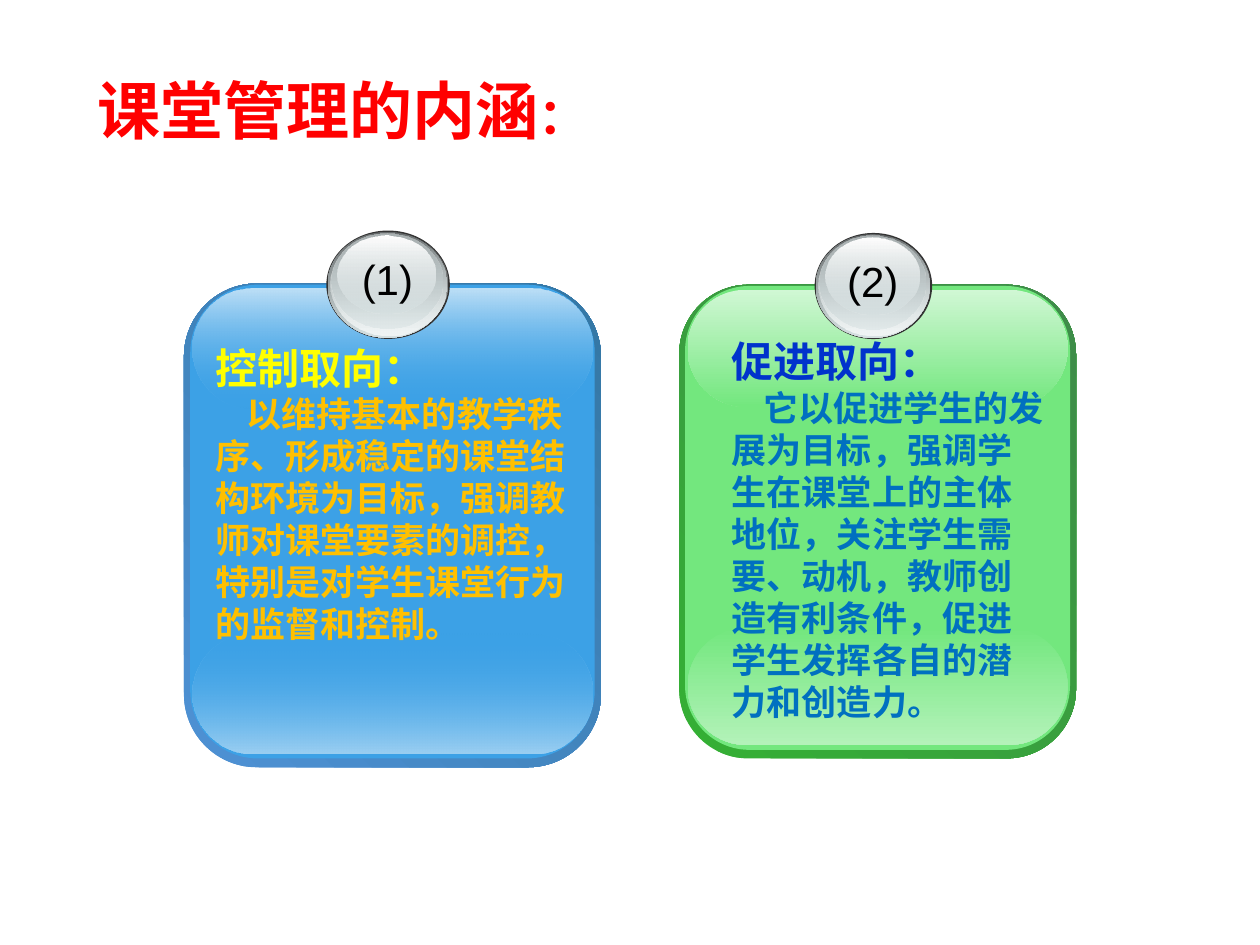
from dataclasses import dataclass
from typing import NamedTuple

from lxml import etree
from pptx import Presentation
from pptx.dml.color import RGBColor
from pptx.enum.shapes import MSO_SHAPE
from pptx.enum.text import MSO_ANCHOR, MSO_AUTO_SIZE, PP_ALIGN
from pptx.oxml.ns import qn
from pptx.util import Inches, Pt

ROUNDED = MSO_SHAPE.ROUNDED_RECTANGLE
ELLIPSE = MSO_SHAPE.OVAL
LEFT, CENTER = PP_ALIGN.LEFT, PP_ALIGN.CENTER
TOP = MSO_ANCHOR.TOP
NO_AUTOFIT = MSO_AUTO_SIZE.NONE
CJK_FONT = "Noto Sans CJK SC"
CARD_WIDTH, CARD_HEIGHT = 3.31, 3.84


class Box(NamedTuple):
    left: float
    top: float
    width: float
    height: float


class Stop(NamedTuple):
    color: str
    alpha: int = 100


@dataclass
class Layer:
    box: Box
    stops: list[Stop]
    angle: int = 90
    corner: float | None = None


@dataclass
class Card:
    box: Box
    rim: list[Stop]
    face: str
    top_gloss: str
    bottom_gloss: str
    fade: int
    number: str
    text_box: Box
    heading: str
    heading_color: str
    body: str
    body_color: str


BALL_LAYERS = [
    Layer(Box(1.13, -0.42, 0.98, 0.86), [Stop("333333")]),
    Layer(Box(1.14, -0.41, 0.95, 0.84), [Stop("636869"), Stop("D6E1E2")]),
    Layer(Box(1.16, -0.41, 0.93, 0.82), [Stop("D6E1E2", 0), Stop("F1F5F5")]),
    Layer(Box(1.17, -0.4, 0.88, 0.76), [Stop("AAB2B3"), Stop("D6E1E2", 48)]),
    Layer(Box(1.22, -0.38, 0.78, 0.62), [Stop("FFFFFF"), Stop("D6E1E2", 38)]),
]
NUMBER_BOX = Box(1.27, -0.29, 0.69, 0.5)

CARDS = [
    Card(Box(1.46, 2.25, CARD_WIDTH, CARD_HEIGHT), [Stop("4E91D4"), Stop("3477A4")],
         "3CA1E6", "BEE0F7", "9BCFF2", 0, "(1)", Box(1.61, 2.65, 2.99, 2.86),
         "控制取向：", "FFFF00",
         "以维持基本的教学秩序、形成稳定的课堂结构环境为目标，强调教师对课堂要素的调控，"
         "特别是对学生课堂行为的监督和控制。", "FFC000"),
    Card(Box(5.39, 2.26, 3.15, 3.76), [Stop("34B034"), Stop("3F8B4A")],
         "73E77E", "D0F7D4", "B3F2B9", 100, "(2)", Box(5.71, 2.6, 2.68, 3.2),
         "促进取向：", "0033CC",
         "它以促进学生的发展为目标，强调学生在课堂上的主体地位，关注学生需要、动机，"
         "教师创造有利条件，促进学生发挥各自的潜力和创造力。", "0070C0"),
]


def rgb(color: str) -> RGBColor:
    return RGBColor.from_string(color)


def lengths(box: Box) -> list[int]:
    return [Inches(value) for value in box]


def place_on_card(part: Box, card: Box) -> Box:
    across, down = card.width / CARD_WIDTH, card.height / CARD_HEIGHT
    return Box(card.left + part.left * across, card.top + part.top * down,
               part.width * across, part.height * down)


def fill_gradient(shape, stops: list[Stop], angle: int) -> None:
    shape.fill.gradient()
    gradient = shape.fill._xPr.find(qn("a:gradFill"))
    for child in list(gradient):
        gradient.remove(child)
    stop_list = etree.SubElement(gradient, qn("a:gsLst"))
    for index, stop in enumerate(stops):
        position = index * 100000 // (len(stops) - 1)
        entry = etree.SubElement(stop_list, qn("a:gs"), pos=str(position))
        color = etree.SubElement(entry, qn("a:srgbClr"), val=stop.color)
        if stop.alpha < 100:
            etree.SubElement(color, qn("a:alpha"), val=str(stop.alpha * 1000))
    etree.SubElement(gradient, qn("a:lin"), ang=str(angle * 60000), scaled="0")


def draw_layer(group, layer: Layer, card: Box) -> None:
    kind = ELLIPSE if layer.corner is None else ROUNDED
    shape = group.shapes.add_shape(kind, *lengths(place_on_card(layer.box, card)))
    shape.shadow.inherit = False
    shape.line.fill.background()
    if layer.corner is not None:
        shape.adjustments[0] = layer.corner
    if len(layer.stops) == 1:
        shape.fill.solid()
        shape.fill.fore_color.rgb = rgb(layer.stops[0].color)
    else:
        fill_gradient(shape, layer.stops, layer.angle)


def format_run(run, size: int, color: str, font: str, bold: bool = True) -> None:
    run.font.size = Pt(size)
    run.font.bold = bold
    run.font.color.rgb = rgb(color)
    run.font.name = font
    latin = run.font._element.find(qn("a:latin"))
    latin.addnext(etree.Element(qn("a:ea"), typeface=CJK_FONT))


def draw_card(slide, card: Card) -> None:
    fading = Stop(card.face, card.fade)
    panel_layers = [
        Layer(Box(0, 0, CARD_WIDTH, CARD_HEIGHT), card.rim, 315, 0.175),
        Layer(Box(0.05, 0.01, 3.21, 3.76), [Stop(card.face)], corner=0.167),
        Layer(Box(0.07, 2.78, 3.17, 0.95), [fading, Stop(card.bottom_gloss)], corner=0.5),
        Layer(Box(0.07, 0.04, 3.17, 0.95), [Stop(card.top_gloss), fading], corner=0.5),
    ]
    group = slide.shapes.add_group_shape()
    for layer in panel_layers + BALL_LAYERS:
        draw_layer(group, layer, card.box)
    number = group.shapes.add_textbox(*lengths(place_on_card(NUMBER_BOX, card.box)))
    number.text_frame.word_wrap = False
    number.text_frame.text = card.number
    label = number.text_frame.paragraphs[0]
    label.alignment = CENTER
    format_run(label.runs[0], 24, "000000", "Arial", False)


def draw_description(slide, card: Card) -> None:
    frame = slide.shapes.add_textbox(*lengths(card.text_box)).text_frame
    frame.word_wrap = True
    frame.text = f"{card.heading}\n{card.body}"
    heading, body = frame.paragraphs
    heading.line_spacing = Pt(30)
    body.line_spacing = Pt(24)
    body._p.get_or_add_pPr().set("indent", str(Inches(0.25)))
    format_run(heading.runs[0], 24, card.heading_color, CJK_FONT)
    format_run(body.runs[0], 20, card.body_color, CJK_FONT)


def draw_title(slide) -> None:
    title = slide.shapes.title
    title.left, title.top, title.width, title.height = lengths(Box(0.67, 0.52, 8.74, 0.71))
    frame = title.text_frame
    frame.word_wrap = True
    frame.auto_size = NO_AUTOFIT
    frame.vertical_anchor = TOP
    paragraph = frame.paragraphs[0]
    paragraph.alignment = LEFT
    for text, size in (("课堂管理的内涵", 36), ("：", 28)):
        run = paragraph.add_run()
        run.text = text
        format_run(run, size, "FF0000", "Times New Roman")


def main() -> None:
    presentation = Presentation()
    presentation.slide_width, presentation.slide_height = Inches(10), Inches(7.5)
    slide = presentation.slides.add_slide(presentation.slide_layouts[5])
    for card in CARDS:
        draw_card(slide, card)
    draw_title(slide)
    for card in CARDS:
        draw_description(slide, card)
    presentation.save("out.pptx")


if __name__ == "__main__":
    main()
